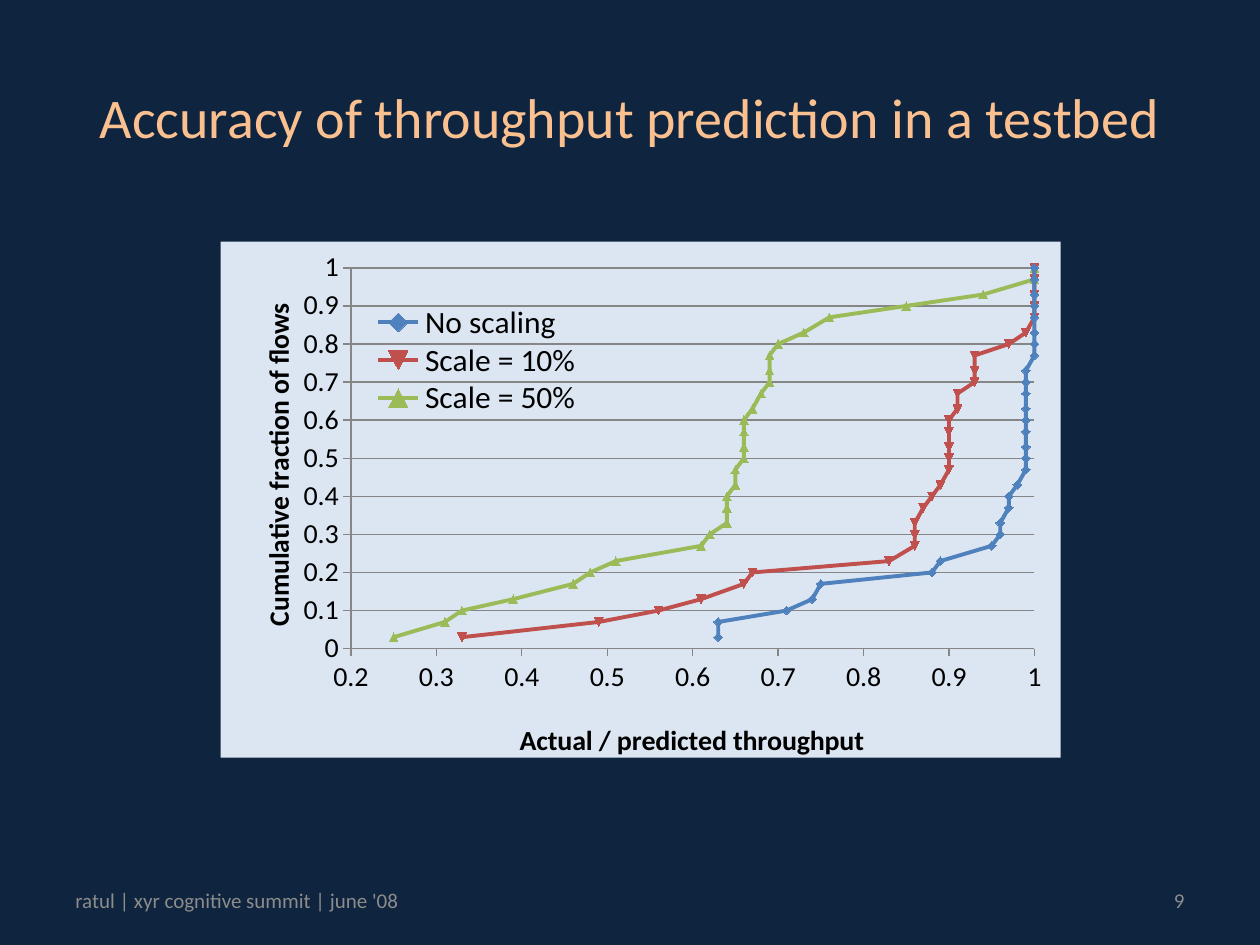
from dataclasses import dataclass

from pptx import Presentation
from pptx.chart.data import XyChartData
from pptx.dml.color import RGBColor
from pptx.enum import chart as kinds, text
from pptx.oxml import parse_xml
from pptx.oxml.ns import nsdecls, qn
from pptx.util import Cm, Pt

FONT = "Calibri"
HUES = {
    "back": "0F243E", "title": "FAC090", "foot": "8C8C8C", "panel": "DCE6F2",
    "ink": "000000", "grid": "868686",
    "blue": "4F81BD", "red": "C0504D", "green": "9BBB59",
}


@dataclass
class Curve:
    name: str
    hue: str
    ratios: list[float]


@dataclass
class Note:
    words: str
    left: float
    width: float
    align: text.PP_ALIGN


CURVES = [
    Curve("No scaling", "blue",
          [0.63, 0.63, 0.71, 0.74, 0.75, 0.88, 0.89, 0.95, 0.96, 0.96,
           0.97, 0.97, 0.98] + [0.99] * 9 + [1] * 8),
    Curve("Scale = 10%", "red",
          [0.33, 0.49, 0.56, 0.61, 0.66, 0.67, 0.83, 0.86, 0.86, 0.86,
           0.87, 0.88, 0.89, 0.9, 0.9, 0.9, 0.9, 0.9, 0.91, 0.91,
           0.93, 0.93, 0.93, 0.97, 0.99] + [1] * 5),
    Curve("Scale = 50%", "green",
          [0.25, 0.31, 0.33, 0.39, 0.46, 0.48, 0.51, 0.61, 0.62, 0.64,
           0.64, 0.64, 0.65, 0.65, 0.66, 0.66, 0.66, 0.66, 0.67, 0.68,
           0.69, 0.69, 0.69, 0.7, 0.73, 0.76, 0.85, 0.94, 1, 1]),
]
NOTES = [
    Note("ratul | xyr cognitive summit | june '08", 1.27, 7.82, text.PP_ALIGN.LEFT),
    Note("9", 18.21, 5.92, text.PP_ALIGN.RIGHT),
]


def tint(hue: str) -> RGBColor:
    return RGBColor.from_string(HUES[hue])


def style(font, size: float, hue: str, bold: bool = False) -> None:
    font.name, font.size, font.bold = FONT, Pt(size), bold
    font.color.rgb = tint(hue)


def write(frame, words: str, *, size: float, hue: str, bold: bool = False,
          align: text.PP_ALIGN = text.PP_ALIGN.CENTER) -> None:
    para = frame.paragraphs[0]
    para.alignment = align
    run = para.add_run()
    run.text = words
    style(run.font, size, hue, bold)


def place(node, index: int, **spots: object) -> None:
    """Give a chart part a manual layout, in fractions of the chart."""
    for old in node.findall(qn("c:layout")):
        node.remove(old)
    tags = "".join(f'<c:{tag} val="{value}"/>' for tag, value in spots.items())
    node.insert(index, parse_xml(
        f'<c:layout {nsdecls("c")}><c:manualLayout>{tags}</c:manualLayout></c:layout>'))


def edge(line, hue: str, width: float) -> None:
    line.color.rgb = tint(hue)
    line.width = Pt(width)


def set_axis(axis, words: str, low: float, grid: bool, x: float, y: float) -> None:
    axis.minimum_scale, axis.maximum_scale, axis.major_unit = low, 1, 0.1
    axis.has_major_gridlines = grid
    if grid:
        edge(axis.major_gridlines.format.line, "grid", 0.75)
    edge(axis.format.line, "grid", 0.75)
    axis.major_tick_mark = kinds.XL_TICK_MARK.OUTSIDE
    axis.minor_tick_mark = kinds.XL_TICK_MARK.NONE
    axis.tick_labels.number_format = "General"
    axis.tick_labels.number_format_is_linked = False
    style(axis.tick_labels.font, 16, "ink")
    title = axis.axis_title
    write(title.text_frame, words, size=16, hue="ink", bold=True)
    place(title._element, 1, xMode="edge", yMode="edge", x=x, y=y)


def draw_chart(slide) -> None:
    data = XyChartData()
    for curve in CURVES:
        points = data.add_series(curve.name)
        for rank, ratio in enumerate(curve.ratios, 1):
            points.add_data_point(ratio, round(rank / len(curve.ratios), 2))
    chart = slide.shapes.add_chart(
        kinds.XL_CHART_TYPE.XY_SCATTER_SMOOTH,
        Cm(4.45), Cm(4.87), Cm(16.93), Cm(10.58), data).chart
    chart.has_title = False
    style(chart.font, 10, "ink")
    root = chart._chartSpace
    root.find(qn("c:chart")).addnext(parse_xml(
        f'<c:spPr {nsdecls("c", "a")}><a:solidFill><a:srgbClr val="{HUES["panel"]}"/>'
        '</a:solidFill><a:ln><a:noFill/></a:ln></c:spPr>'))
    place(root.chart.plotArea, 0, layoutTarget="inner", xMode="edge", yMode="edge",
          x=0.155, y=0.051, w=0.814, h=0.738)

    set_axis(chart.category_axis, "Actual / predicted throughput", 0.2, False, 0.35, 0.92)
    set_axis(chart.value_axis, "Cumulative fraction of flows", 0, True, 0.04, 0.12)

    chart.has_legend = True
    legend = chart.legend
    legend.position = kinds.XL_LEGEND_POSITION.RIGHT
    legend.include_in_layout = False
    style(legend.font, 18, "ink")
    place(legend._element, 1, xMode="edge", yMode="edge", x=0.18, y=0.12, w=0.25, h=0.22)

    for curve, series in zip(CURVES, chart.plots[0].series):
        series.smooth = True
        edge(series.format.line, curve.hue, 2.25)
        series.marker.size = 5
        mark = series.marker.format
        mark.fill.solid()
        mark.fill.fore_color.rgb = tint(curve.hue)
        edge(mark.line, curve.hue, 0.75)


def draw_note(slide, note: Note) -> None:
    box = slide.shapes.add_textbox(Cm(note.left), Cm(17.65), Cm(note.width), Cm(1.01))
    frame = box.text_frame
    frame.word_wrap = True
    frame.vertical_anchor = text.MSO_ANCHOR.MIDDLE
    write(frame, note.words, size=12, hue="foot", align=note.align)


def main() -> None:
    deck = Presentation()
    deck.slide_width, deck.slide_height = Cm(25.4), Cm(19.05)
    slide = deck.slides.add_slide(deck.slide_layouts[5])
    slide.background.fill.solid()
    slide.background.fill.fore_color.rgb = tint("back")

    title = slide.shapes.title
    title.left, title.top, title.width, title.height = Cm(1.27), Cm(0.76), Cm(22.86), Cm(3.18)
    title.text_frame.vertical_anchor = text.MSO_ANCHOR.MIDDLE
    write(title.text_frame, "Accuracy of throughput prediction in a testbed",
          size=32, hue="title")
    draw_chart(slide)
    for note in NOTES:
        draw_note(slide, note)
    deck.save("out.pptx")


if __name__ == "__main__":
    main()
